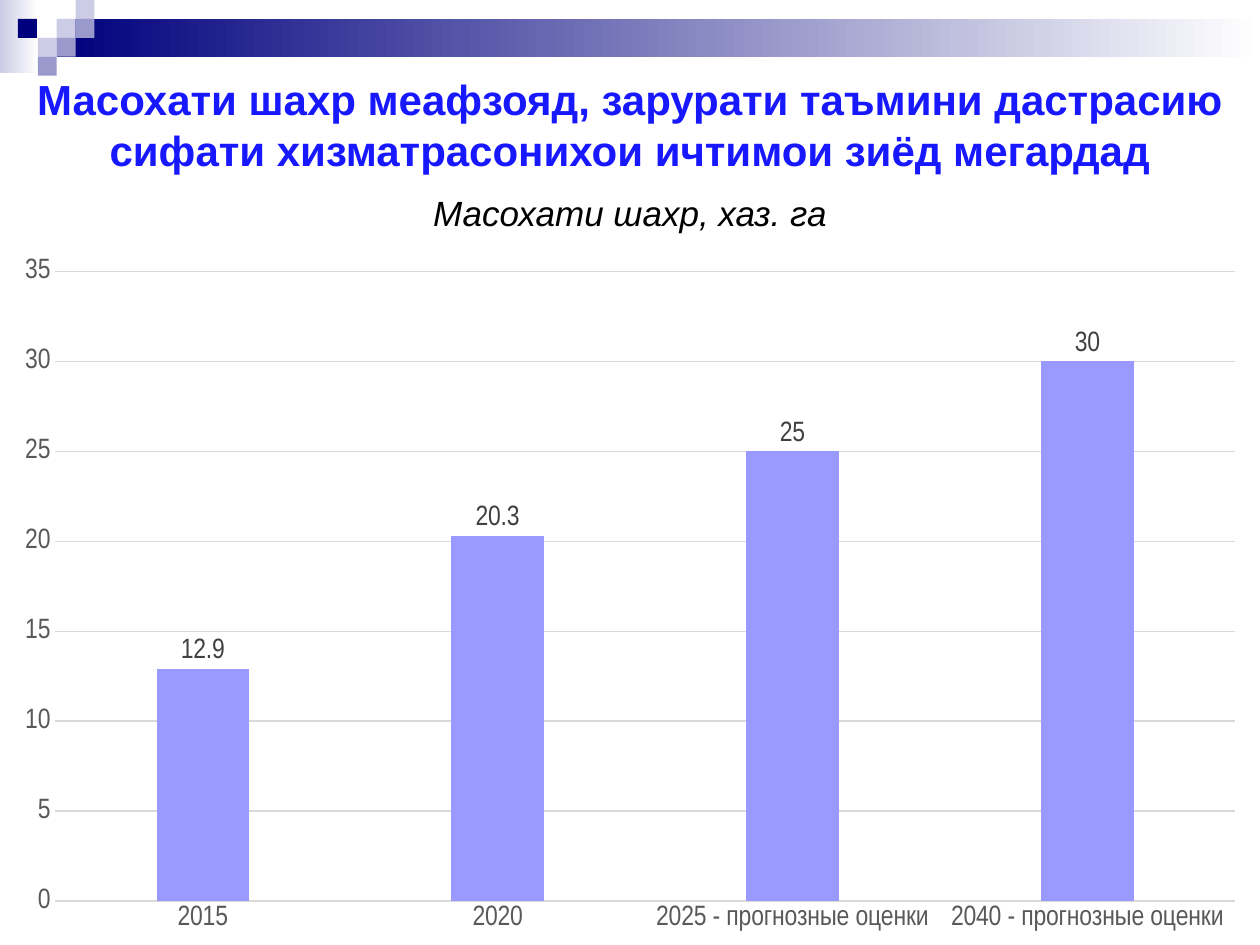
"""Builds a slide with a column chart of the growth of a city's area."""
from dataclasses import dataclass

from pptx import Presentation
from pptx.chart.data import CategoryChartData
from pptx.dml.color import RGBColor
from pptx.enum.chart import XL_CHART_TYPE, XL_LABEL_POSITION, XL_TICK_MARK
from pptx.enum.shapes import MSO_SHAPE
from pptx.enum.text import MSO_ANCHOR, MSO_AUTO_SIZE, PP_ALIGN
from pptx.util import Pt

COLUMN = XL_CHART_TYPE.COLUMN_CLUSTERED
OUTSIDE = XL_LABEL_POSITION.OUTSIDE_END
NO_TICK = XL_TICK_MARK.NONE
RECT = MSO_SHAPE.RECTANGLE
CENTER = PP_ALIGN.CENTER
TOP, MIDDLE = MSO_ANCHOR.TOP, MSO_ANCHOR.MIDDLE
NO_FIT = MSO_AUTO_SIZE.NONE


@dataclass(frozen=True)
class Theme:
    navy: str = "00007D"
    slate: str = "9999CC"
    pale: str = "CCCCE6"
    white: str = "FFFFFF"
    title: str = "1818FF"
    black: str = "000000"
    bar: str = "9999FF"
    grid: str = "D9D9D9"
    axis: str = "595959"
    label: str = "404040"
    head: str = "Arial"
    body: str = "Arial Narrow"
    big: int = 24
    mid: int = 20
    small: int = 16


theme = Theme()


def style(font, color, **values):
    font.color.rgb = RGBColor.from_string(color)
    for name, value in values.items():
        setattr(font, name, value)


def block(left, top, width, height, *colors):
    box = slide.shapes.add_shape(RECT, Pt(left), Pt(top), Pt(width), Pt(height))
    box.shadow.inherit = False
    box.line.fill.background()
    if len(colors) == 1:
        box.fill.solid()
        box.fill.fore_color.rgb = RGBColor.from_string(colors[0])
        return
    box.fill.gradient()
    box.fill.gradient_angle = 0
    for stop, color, place in zip(box.fill.gradient_stops, colors, (0, 1)):
        stop.color.rgb = RGBColor.from_string(color)
        stop.position = place


deck = Presentation()
deck.slide_width, deck.slide_height = Pt(720), Pt(540)
slide = deck.slides.add_slide(deck.slide_layouts[5])

unit = 10.8
block(0, 0, 22, 42, theme.pale, theme.white)
block(3 * unit, unit, 720 - 3 * unit, 2 * unit, theme.navy, theme.white)
tiles = [
    (3, 1, theme.pale), (4, 0, theme.pale), (4, 1, theme.slate),
    (2, 2, theme.pale), (0.95, 1, theme.navy), (3, 2, theme.slate),
    (2, 3, theme.slate),
]
for col, row, color in tiles:
    block(col * unit, row * unit, unit, unit, color)

title = slide.shapes.title
note = slide.shapes.add_textbox(0, 0, 0, 0)
texts = [
    (title, 36, 70, MIDDLE, 0, theme.title,
     "Масохати шахр меафзояд, зарурати таъмини дастрасию "
     "сифати хизматрасонихои ичтимои зиёд мегардад",
     {"size": Pt(theme.big), "bold": True}),
    (note, 106, 34, TOP, 4, theme.black, "Масохати шахр, хаз. га",
     {"size": Pt(theme.mid), "italic": True}),
]
for shape, top, height, anchor, gap, color, words, look in texts:
    shape.left, shape.top = Pt(0), Pt(top)
    shape.width, shape.height = Pt(720), Pt(height)
    frame = shape.text_frame
    frame.word_wrap = True
    frame.auto_size = NO_FIT
    frame.vertical_anchor = anchor
    para = frame.paragraphs[0]
    para.alignment = CENTER
    para.space_before = Pt(gap)
    run = para.add_run()
    run.text = words
    style(run.font, color, name=theme.head, **look)

data = CategoryChartData()
data.categories = [
    "2015", "2020", "2025 - прогнозные оценки", "2040 - прогнозные оценки",
]
data.add_series("Series 1", [12.9, 20.3, 25, 30])
chart = slide.shapes.add_chart(
    COLUMN, Pt(0), Pt(140), Pt(720), Pt(400), data).chart
chart.has_legend = False
chart.has_title = False
small = {"name": theme.body, "size": Pt(theme.small), "bold": False}
style(chart.font, theme.black, **small)

years, area = chart.category_axis, chart.value_axis
for axis in (years, area):
    axis.major_tick_mark = NO_TICK
    axis.minor_tick_mark = NO_TICK
    style(axis.tick_labels.font, theme.axis, **small)
area.minimum_scale, area.maximum_scale, area.major_unit = 0, 35, 5
area.has_major_gridlines = True
area.format.line.fill.background()
for line in (years.format.line, area.major_gridlines.format.line):
    line.color.rgb = RGBColor.from_string(theme.grid)
    line.width = Pt(0.75)

plot = chart.plots[0]
plot.vary_by_categories = False
plot.gap_width, plot.overlap = 219, -27
bars = plot.series[0]
bars.format.fill.solid()
bars.format.fill.fore_color.rgb = RGBColor.from_string(theme.bar)
labels = bars.data_labels
labels.show_value = True
labels.position = OUTSIDE
style(labels.font, theme.label, **small)

deck.save("out.pptx")
